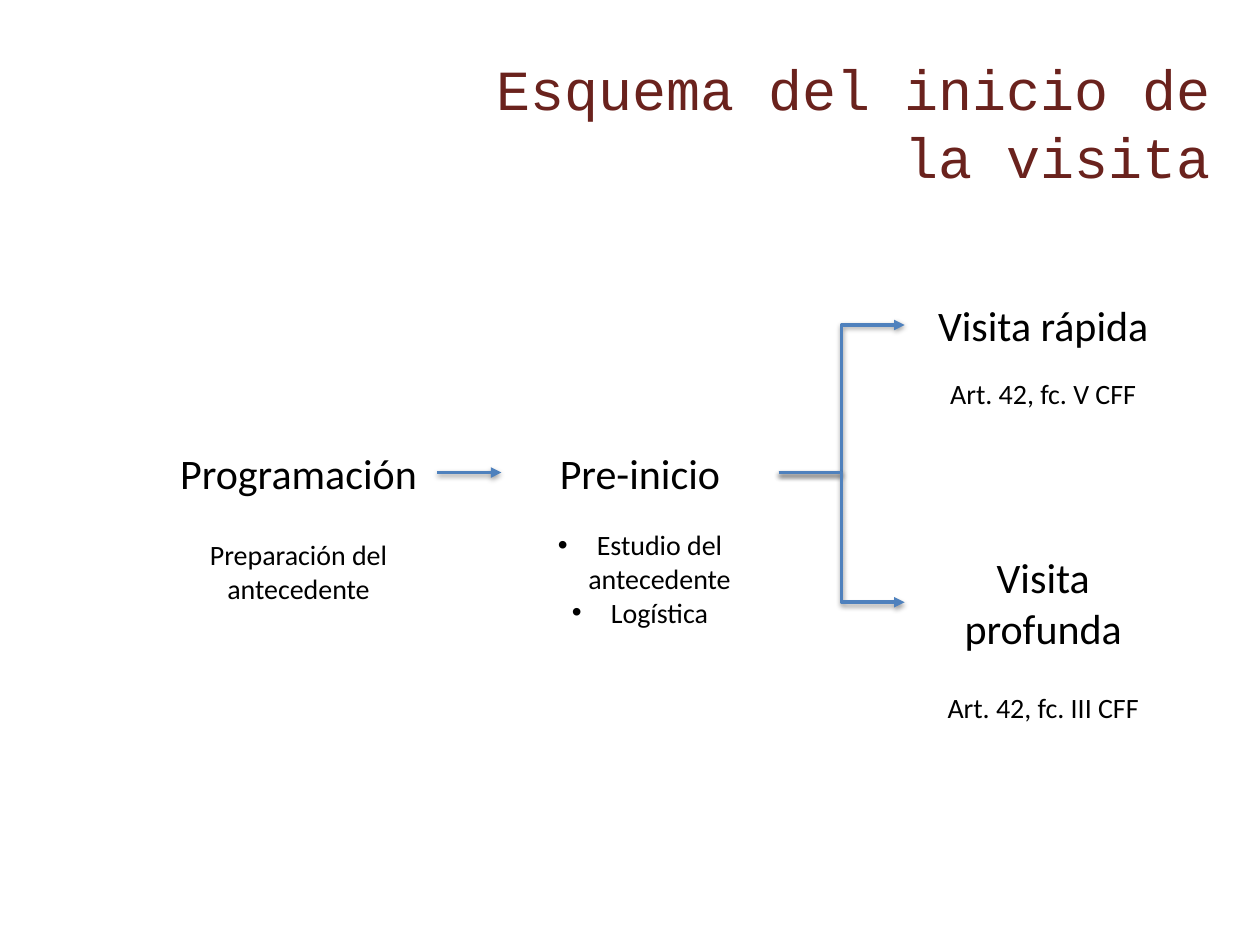
from lxml import etree
from pptx import Presentation
from pptx.dml.color import RGBColor
from pptx.enum.shapes import MSO_CONNECTOR as Connector
from pptx.enum.text import MSO_ANCHOR as Anchor, MSO_AUTO_SIZE as AutoSize, PP_ALIGN as Align
from pptx.oxml import parse_xml
from pptx.oxml.ns import nsdecls, qn
from pptx.util import Inches, Pt

BLACK, BLUE, MAROON = "000000", "4F81BD", "6A221D"
STEP_WIDTH = 2.2
HEADING_HEIGHT = 0.5
LINE_SHADOW = f"""<a:effectLst {nsdecls("a")}>
  <a:outerShdw blurRad="{Pt(3.1)}" dist="{Pt(1.6)}" dir="5400000" rotWithShape="0">
    <a:srgbClr val="{BLACK}"><a:alpha val="38000"/></a:srgbClr>
  </a:outerShdw>
</a:effectLst>"""


def color(value):
    return RGBColor.from_string(value)


def add_bullet(para, indent):
    props = para._p.get_or_add_pPr()
    props.set("marL", str(Inches(indent)))
    props.set("indent", str(-Inches(indent)))
    etree.SubElement(props, qn("a:buFont"), typeface="Arial")
    etree.SubElement(props, qn("a:buChar"), char="•")


def write(frame, *lines, size, font="Calibri", fill=BLACK, align=Align.CENTER, bullets=False):
    frame.word_wrap = True
    for index, line in enumerate(lines):
        para = frame.add_paragraph() if index else frame.paragraphs[0]
        para.alignment = align
        if bullets:
            add_bullet(para, 0.31)
        span = para.add_run()
        span.text = line
        span.font.size = Pt(size)
        span.font.name = font
        span.font.color.rgb = color(fill)


def add_text(page, left, top, height, *lines, **style):
    box = page.shapes.add_textbox(Inches(left), Inches(top), Inches(STEP_WIDTH), Inches(height))
    write(box.text_frame, *lines, **style)


def add_title(page, left, top, width, height):
    title = page.shapes.title
    title.left, title.top = Inches(left), Inches(top)
    title.width, title.height = Inches(width), Inches(height)
    frame = title.text_frame
    frame.auto_size = AutoSize.NONE
    frame.vertical_anchor = Anchor.MIDDLE
    write(frame, "Esquema del inicio de la visita",
          size=32.4, font="Courier New", fill=MAROON, align=Align.RIGHT)


def add_step(page, left, top, heading, details, offset, heading_height=HEADING_HEIGHT,
             details_height=0.37, bullets=False):
    """Place a heading with its details at an offset below the heading's top."""
    add_text(page, left, top, heading_height, heading, size=24)
    add_text(page, left, top + offset, details_height, *details, size=16, bullets=bullets)


def add_arrow(page, start, end, kind=Connector.ELBOW):
    arrow = page.shapes.add_connector(kind, *(Inches(value) for value in (*start, *end)))
    arrow.line.color.rgb = color(BLUE)
    arrow.line.width = Pt(2)
    etree.SubElement(arrow.line._get_or_add_ln(), qn("a:tailEnd"), type="triangle")
    arrow._element.spPr.append(parse_xml(LINE_SHADOW))


def add_diagram(page, left, top):
    """Draw the flow from planning to the two kinds of visit."""
    middle, right = left + 2.71, left + 5.91
    flow_top = top + 1.17
    deep_top = top + 2
    add_step(page, left, flow_top, "Programación", ["Preparación del antecedente"],
             offset=0.72, details_height=0.64)
    add_step(page, middle, flow_top, "Pre-inicio", ["Estudio del antecedente", "Logística"],
             offset=0.64, details_height=0.91, bullets=True)
    add_step(page, right, top, "Visita rápida", ["Art. 42, fc. V CFF"], offset=0.61)
    add_step(page, right, deep_top, "Visita profunda", ["Art. 42, fc. III CFF"],
             offset=1.1, heading_height=0.91)

    flow_y = flow_top + HEADING_HEIGHT / 2
    fork = (middle + STEP_WIDTH, flow_y)
    add_arrow(page, (left + STEP_WIDTH, flow_y), (middle, flow_y), Connector.STRAIGHT)
    add_arrow(page, fork, (right, top + HEADING_HEIGHT / 2))
    add_arrow(page, fork, (right, deep_top + 0.45))


def main():
    deck = Presentation()
    deck.slide_width, deck.slide_height = Inches(10), Inches(7.5)
    page = deck.slides.add_slide(deck.slide_layouts[5])
    add_title(page, 3.27, 0.38, 6.44, 1.18)
    add_diagram(page, 1.27, 2.33)
    deck.save("out.pptx")


if __name__ == "__main__":
    main()
